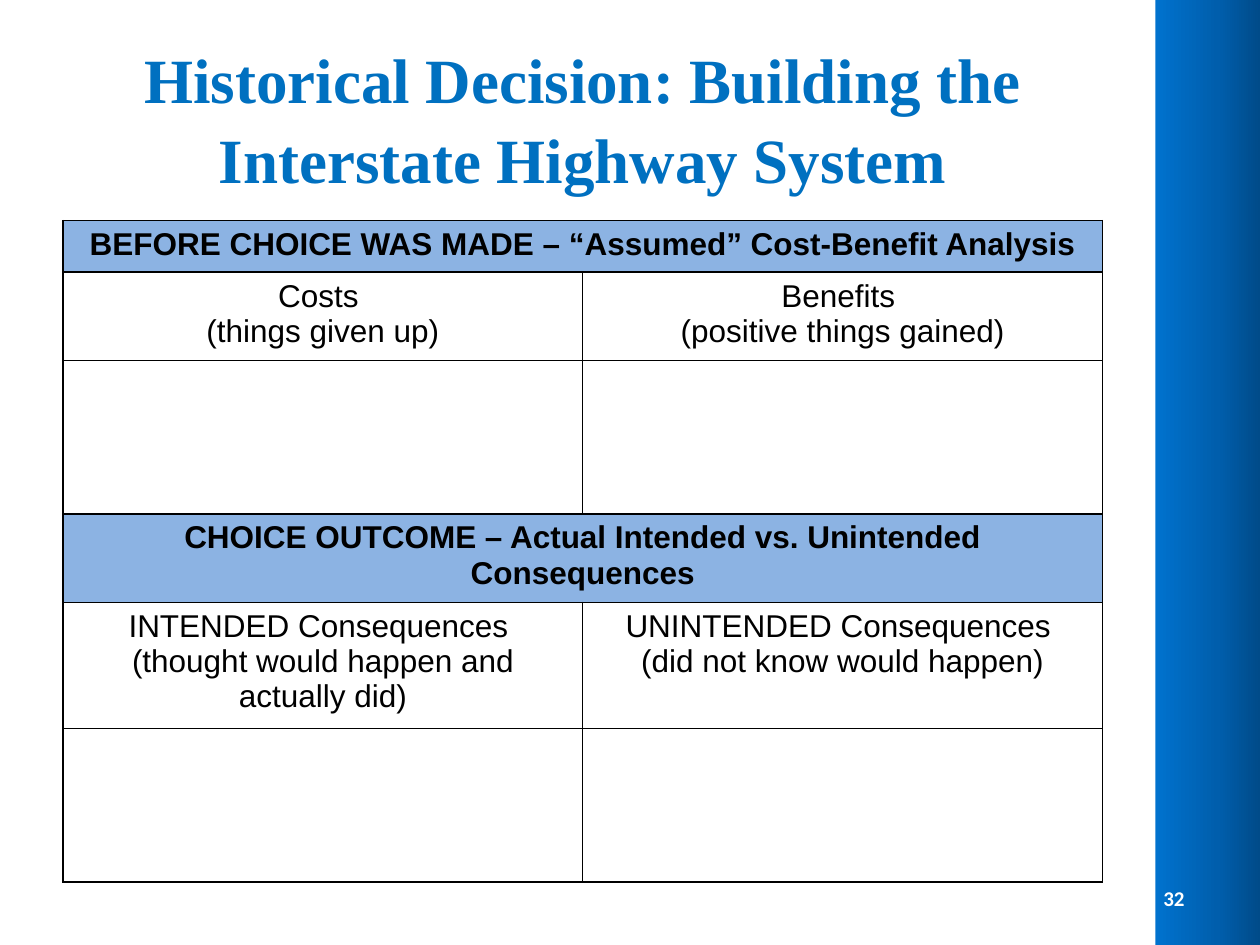
from copy import deepcopy
from dataclasses import dataclass

from lxml import etree
from pptx import Presentation
from pptx.dml.color import RGBColor
from pptx.enum.shapes import MSO_SHAPE
from pptx.enum.text import MSO_ANCHOR, PP_ALIGN
from pptx.oxml.ns import qn
from pptx.util import Inches, Pt

CENTER, RIGHT = PP_ALIGN.CENTER, PP_ALIGN.RIGHT
MIDDLE = MSO_ANCHOR.MIDDLE
RECTANGLE = MSO_SHAPE.RECTANGLE


@dataclass(frozen=True)
class Theme:
    title_color: str = "0070C0"
    band: str = "8CB3E3"
    ink: str = "000000"
    white: str = "FFFFFF"
    sidebar: tuple = ((0, "0072CE"), (0.6, "005EAC"), (1, "004B89"))
    title_font: str = "Times New Roman"
    table_font: str = "Arial"
    number_font: str = "Calibri"
    title_size: int = 36
    table_size: int = 18
    number_size: int = 12
    border: float = 1


def write_text(tf, text, *, font, size, color, bold=False, align=CENTER,
               spacing=None):
    """Write each line of text as its own paragraph."""
    tf.word_wrap = True
    for i, line in enumerate(text.split("\n")):
        p = tf.add_paragraph() if i else tf.paragraphs[0]
        p.alignment = align
        if spacing:
            p.line_spacing = spacing
        r = p.add_run()
        r.text = line
        r.font.name = font
        r.font.size = Pt(size)
        r.font.bold = bold
        r.font.color.rgb = RGBColor.from_string(color)


def add_borders(cell, color, width):
    tc_pr = cell._tc.get_or_add_tcPr()
    for i, side in enumerate(("a:lnL", "a:lnR", "a:lnT", "a:lnB")):
        ln = etree.Element(qn(side), w=str(Pt(width)))
        fill = etree.SubElement(ln, qn("a:solidFill"))
        etree.SubElement(fill, qn("a:srgbClr"), val=color)
        tc_pr.insert(i, ln)


class SlideBuilder:
    def __init__(self, slide, theme):
        self.slide = slide
        self.theme = theme

    def text(self, x, y, w, h, text, **fmt):
        sp = self.slide.shapes.add_textbox(Inches(x), Inches(y), Inches(w), Inches(h))
        sp.text_frame.vertical_anchor = MIDDLE
        write_text(sp.text_frame, text, **fmt)

    def gradient_bar(self, x, y, w, h, stops):
        sp = self.slide.shapes.add_shape(
            RECTANGLE, Inches(x), Inches(y), Inches(w), Inches(h))
        sp.shadow.inherit = False
        sp.line.fill.background()
        sp.fill.gradient()
        sp.fill.gradient_angle = 0
        stop_list = sp.fill._fill._gradFill.find(qn("a:gsLst"))
        stop_list.insert(1, deepcopy(stop_list[0]))
        for stop, (position, color) in zip(sp.fill.gradient_stops, stops):
            stop.position = position
            stop.color.rgb = RGBColor.from_string(color)

    def table(self, x, y, w, rows):
        """Add two-column rows of (height, texts); a single text spans both."""
        t = self.theme
        height = sum(h for h, _ in rows)
        table = self.slide.shapes.add_table(
            len(rows), 2, Inches(x), Inches(y), Inches(w), Inches(height)).table
        table.first_row = table.horz_banding = False
        for i, (row_height, texts) in enumerate(rows):
            table.rows[i].height = Inches(row_height)
            is_band = len(texts) == 1
            if is_band:
                table.cell(i, 0).merge(table.cell(i, 1))
            for cell in table.rows[i].cells:
                if is_band:
                    cell.fill.solid()
                    cell.fill.fore_color.rgb = RGBColor.from_string(t.band)
                else:
                    cell.fill.background()
                add_borders(cell, t.ink, t.border)
                cell.margin_left = cell.margin_right = Inches(0.1)
                cell.margin_top = cell.margin_bottom = Inches(0.05)
            for j, text in enumerate(texts):
                if text:
                    write_text(table.cell(i, j).text_frame, text, font=t.table_font,
                               size=t.table_size, color=t.ink, bold=is_band)


def main():
    prs = Presentation()
    prs.slide_width, prs.slide_height = Inches(10), Inches(7.5)
    theme = Theme()
    s = SlideBuilder(prs.slides.add_slide(prs.slide_layouts[6]), theme)

    s.gradient_bar(9.17, 0, 0.83, 7.5, theme.sidebar)
    s.text(0.5, 0.3, 8.25, 1.25,
           "Historical Decision: Building the Interstate Highway System",
           font=theme.title_font, size=theme.title_size,
           color=theme.title_color, bold=True, spacing=1.05)
    s.table(0.5, 1.75, 8.25, [
        (0.41, ["BEFORE CHOICE WAS MADE – “Assumed” Cost-Benefit Analysis"]),
        (0.66, ["Costs \n(things given up)",
                "Benefits \n(positive things gained)"]),
        (1.22, ["", ""]),
        (0.66, ["CHOICE OUTCOME – Actual Intended vs. Unintended Consequences"]),
        (0.94, ["INTENDED Consequences \n(thought would happen and actually did)",
                "UNINTENDED Consequences \n(did not know would happen)"]),
        (1.22, ["", ""]),
    ])
    s.text(9.08, 6.93, 0.42, 0.4, "32", font=theme.number_font,
           size=theme.number_size, color=theme.white, bold=True, align=RIGHT)
    prs.save("out.pptx")


if __name__ == "__main__":
    main()
